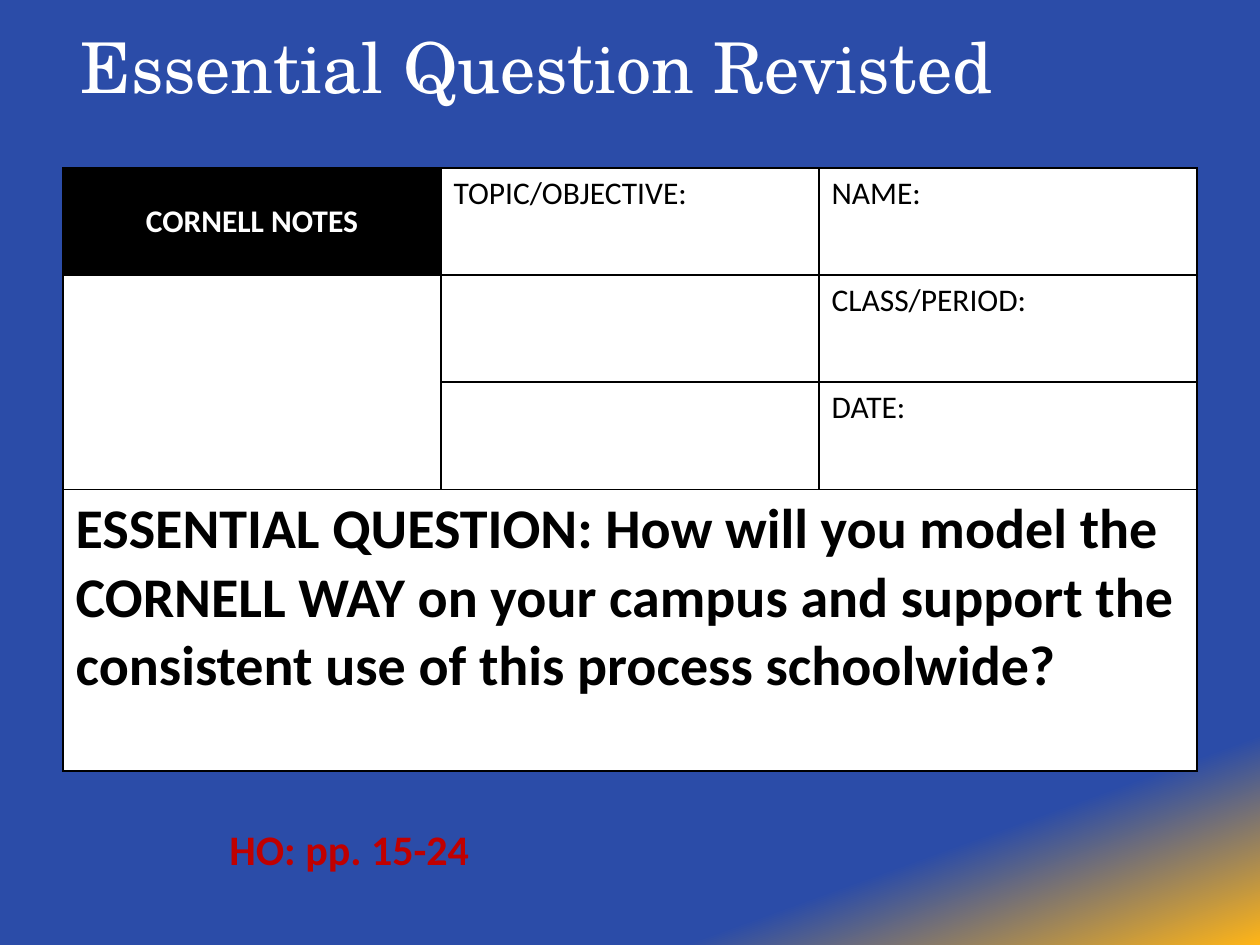
from pptx import Presentation
from pptx.dml.color import RGBColor
from pptx.enum import text
from pptx.oxml import parse_xml
from pptx.oxml import ns
from pptx.util import Pt

BLUE = RGBColor(0x2B, 0x4C, 0xA8)
GOLD = RGBColor(0xFF, 0xB5, 0x17)
RED = RGBColor(0xC0, 0x00, 0x00)
BLACK = RGBColor(0, 0, 0)
WHITE = RGBColor(0xFF, 0xFF, 0xFF)


class NotesSlide:
    body_font = "Calibri"
    title_font = "TeX Gyre Schola"
    border = Pt(1)

    def __init__(self, slide):
        self.slide = slide

    def background(self, stops, angle):
        fill = self.slide.background.fill
        fill.gradient()
        fill.gradient_angle = angle
        for stop, (position, color) in zip(fill.gradient_stops, stops):
            stop.position = position
            stop.color.rgb = color

    def set_text(self, frame, words, size, color, bold=False, font=None):
        paragraph = frame.paragraphs[0]
        paragraph.text = words
        paragraph.font.name = font or self.body_font
        paragraph.font.size = Pt(size)
        paragraph.font.bold = bold
        paragraph.font.color.rgb = color
        return paragraph

    def label(self, box, words, size, color, bold=False, font=None):
        frame = self.slide.shapes.add_textbox(*map(Pt, box)).text_frame
        frame.word_wrap = True
        self.set_text(frame, words, size, color, bold, font)

    def grid(self, left, top, widths, heights):
        table = self.slide.shapes.add_table(
            len(heights), len(widths), Pt(left), Pt(top),
            Pt(sum(widths)), Pt(sum(heights))).table
        for column, width in zip(table.columns, widths):
            column.width = Pt(width)
        for row, height in zip(table.rows, heights):
            row.height = Pt(height)
        for cell in table.iter_cells():
            self.outline(cell)
            cell.fill.solid()
            cell.fill.fore_color.rgb = WHITE
        return table

    def outline(self, cell):
        properties = cell._tc.get_or_add_tcPr()
        for side in ("lnL", "lnR", "lnT", "lnB"):
            properties.append(parse_xml(
                f'<a:{side} {ns.nsdecls("a")} w="{self.border}"><a:solidFill>'
                f'<a:srgbClr val="{BLACK}"/></a:solidFill></a:{side}>'))


def main():
    deck = Presentation()
    deck.slide_width, deck.slide_height = Pt(720), Pt(540)
    page = NotesSlide(deck.slides.add_slide(deck.slide_layouts[6]))
    page.background([(0.85, BLUE), (1, GOLD)], 290)

    # Cornell notes form
    form = page.grid(36, 96, [216] * 3, [61.2] * 3 + [161])
    form.cell(1, 0).merge(form.cell(2, 0))
    form.cell(3, 0).merge(form.cell(3, 2))

    heading = form.cell(0, 0)
    heading.fill.fore_color.rgb = BLACK
    heading.vertical_anchor = text.MSO_ANCHOR.MIDDLE
    page.set_text(heading.text_frame, "CORNELL NOTES", 18, WHITE,
                  bold=True).alignment = text.PP_ALIGN.CENTER

    fields = {(0, 1): "TOPIC/OBJECTIVE:", (0, 2): "NAME:",
              (1, 2): "CLASS/PERIOD:", (2, 2): "DATE:"}
    for place, field in fields.items():
        page.set_text(form.cell(*place).text_frame, field, 18, BLACK)

    question = ("ESSENTIAL QUESTION: How will you model the CORNELL WAY on your "
                "campus and support the consistent use of this process schoolwide?")
    page.set_text(form.cell(3, 0).text_frame, question, 32, BLACK, bold=True)

    # Handout reference and title
    page.label((124, 467, 174, 36), "HO: pp. 15-24", 24, RED, bold=True)
    page.label((39, 10, 595, 45), "Essential Question Revisted", 40, WHITE,
               font=page.title_font)

    deck.save("out.pptx")


if __name__ == "__main__":
    main()
